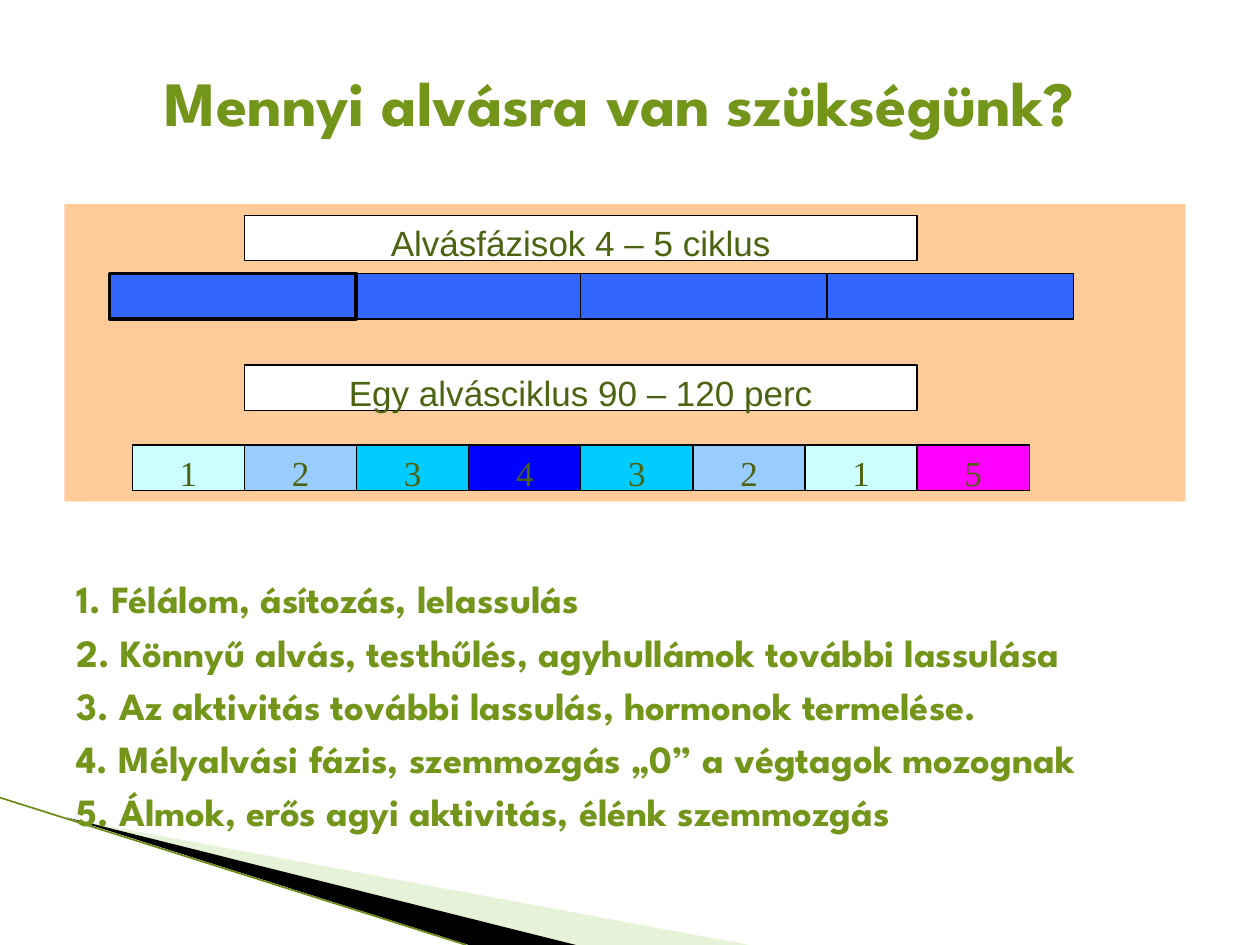
import pptx
import pptx.util
import pptx.dml.color
import pptx.enum.shapes
import pptx.enum.text
import pptx.oxml
import pptx.oxml.ns
from pptx.util import Cm

COLORS = {
    "heading": "72951A",
    "label": "4C6311",
    "panel": "FFCC99",
    "cycle": "3366FF",
    "white": "FFFFFF",
    "black": "000000",
    "pale_wedge": "C5E19F",
    "wedge_edge": "6B8B14",
}
PHASE_COLORS = {"1": "CCFFFF", "2": "99CCFF", "3": "00CCFF", "4": "0000FF", "5": "FF00FF"}
PHASE_ORDER = "12343215"
PHASE_NOTES = [
    "1. Félálom, ásítozás, lelassulás",
    "2. Könnyű alvás, testhűlés, agyhullámok további lassulása",
    "3. Az aktivitás további lassulás, hormonok termelése.",
    "4. Mélyalvási fázis, szemmozgás „0” a végtagok mozognak",
    "5. Álmok, erős agyi aktivitás, élénk szemmozgás",
]
COLUMN = 2.26
BAR_HEIGHT = 0.92
PHASES_LEFT = 2.67
CYCLES_LEFT = 2.21
CYCLE_COLUMNS = [2.2, 2, 2.2, 2.2]


def rgb(hex_color):
    return pptx.dml.color.RGBColor.from_string(hex_color)


def style_paragraph(paragraph, size, font_name, color, bold=False):
    font = paragraph.font
    font.size = pptx.util.Pt(size)
    font.name = font_name
    font.bold = bold
    font.color.rgb = rgb(color)


def paint(shape, fill, line_width=None):
    """Flat fill, with a black outline only when a width is given."""
    shape.shadow.inherit = False
    shape.fill.solid()
    shape.fill.fore_color.rgb = rgb(fill)
    if line_width is None:
        shape.line.fill.background()
    else:
        shape.line.color.rgb = rgb(COLORS["black"])
        shape.line.width = pptx.util.Pt(line_width)


def add_bar(shapes, left, top, width, height, fill, line_width=0.75, label="", font_name="Arial"):
    bar = shapes.add_shape(pptx.enum.shapes.MSO_SHAPE.RECTANGLE,
                           Cm(left), Cm(top), Cm(width), Cm(height))
    paint(bar, fill, line_width)
    if label:
        frame = bar.text_frame
        frame.text = label
        frame.vertical_anchor = pptx.enum.text.MSO_ANCHOR.TOP
        frame.paragraphs[0].alignment = pptx.enum.text.PP_ALIGN.CENTER
        style_paragraph(frame.paragraphs[0], 20, font_name, COLORS["label"])


def add_wedge(shapes, corners, fill, opacity=100):
    points = [(Cm(x), Cm(y)) for x, y in corners]
    builder = shapes.build_freeform(*points[0])
    builder.add_line_segments(points[1:], close=True)
    wedge = builder.convert_to_shape()
    paint(wedge, fill)
    if opacity < 100:
        color = wedge.fill._xPr.find(".//" + pptx.oxml.ns.qn("a:srgbClr"))
        alpha = color.makeelement(pptx.oxml.ns.qn("a:alpha"), {"val": str(opacity * 1000)})
        color.append(alpha)


def add_corner_decoration(shapes):
    add_wedge(shapes, [(1.4, 16.51), (15.11, 19.05), (11.58, 19.05)], COLORS["pale_wedge"], 40)
    add_wedge(shapes, [(1.35, 16.48), (11.61, 19.05), (9.45, 19.05)], COLORS["black"])
    edge = shapes.add_connector(pptx.enum.shapes.MSO_CONNECTOR.STRAIGHT,
                                Cm(0), Cm(16.08), Cm(9.4), Cm(19.05))
    edge.line.color.rgb = rgb(COLORS["wedge_edge"])
    edge.line.width = pptx.util.Pt(0.95)
    properties = edge._element.spPr
    properties.append(properties.makeelement(pptx.oxml.ns.qn("a:effectLst"), {}))


def add_title(shapes):
    title = shapes.add_textbox(Cm(0.69), Cm(0.76), Cm(23.6), Cm(2.16)).text_frame
    title.word_wrap = True
    title.vertical_anchor = pptx.enum.text.MSO_ANCHOR.BOTTOM
    title.text = "Mennyi alvásra van szükségünk?"
    title.paragraphs[0].alignment = pptx.enum.text.PP_ALIGN.CENTER
    style_paragraph(title.paragraphs[0], 36, "League Spartan", COLORS["heading"], bold=True)


def add_phase_notes(shapes):
    notes = shapes.add_textbox(Cm(1.3), Cm(11.33), Cm(22.86), Cm(5.44)).text_frame
    notes.word_wrap = True
    notes.margin_top = Cm(0.27)
    notes.text = "\n".join(PHASE_NOTES)
    for index, paragraph in enumerate(notes.paragraphs):
        indents = paragraph._p.get_or_add_pPr()
        indents.set("marL", str(Cm(1.07)))
        indents.set("indent", str(Cm(-1.07)))
        if index:
            paragraph.space_before = pptx.util.Pt(4)
        style_paragraph(paragraph, 22, "League Spartan", COLORS["heading"], bold=True)


def add_sleep_diagram(shapes):
    diagram = shapes.add_group_shape().shapes
    add_bar(diagram, 1.3, 4.11, 10 * COLUMN, 6, COLORS["panel"], line_width=None)

    # The first cycle is drawn last so that its thick outline stays on top.
    for index in reversed(range(len(CYCLE_COLUMNS))):
        left = CYCLES_LEFT + sum(CYCLE_COLUMNS[:index]) * COLUMN
        add_bar(diagram, left, 5.51, CYCLE_COLUMNS[index] * COLUMN, BAR_HEIGHT,
                COLORS["cycle"], line_width=0.75 if index else 2)

    for top, caption in [(4.34, "Alvásfázisok 4 – 5 ciklus"),
                         (7.36, "Egy alvásciklus 90 – 120 perc")]:
        add_bar(diagram, PHASES_LEFT + COLUMN, top, 6 * COLUMN, BAR_HEIGHT,
                COLORS["white"], label=caption)

    for index, phase in enumerate(PHASE_ORDER):
        add_bar(diagram, PHASES_LEFT + index * COLUMN, 8.97, COLUMN, BAR_HEIGHT,
                PHASE_COLORS[phase], label=phase, font_name="Times New Roman")


def main():
    presentation = pptx.Presentation()
    presentation.slide_width = Cm(25.4)
    presentation.slide_height = Cm(19.05)
    shapes = presentation.slides.add_slide(presentation.slide_layouts[6]).shapes
    add_corner_decoration(shapes)
    add_title(shapes)
    add_phase_notes(shapes)
    add_sleep_diagram(shapes)
    presentation.save("out.pptx")


if __name__ == "__main__":
    main()
